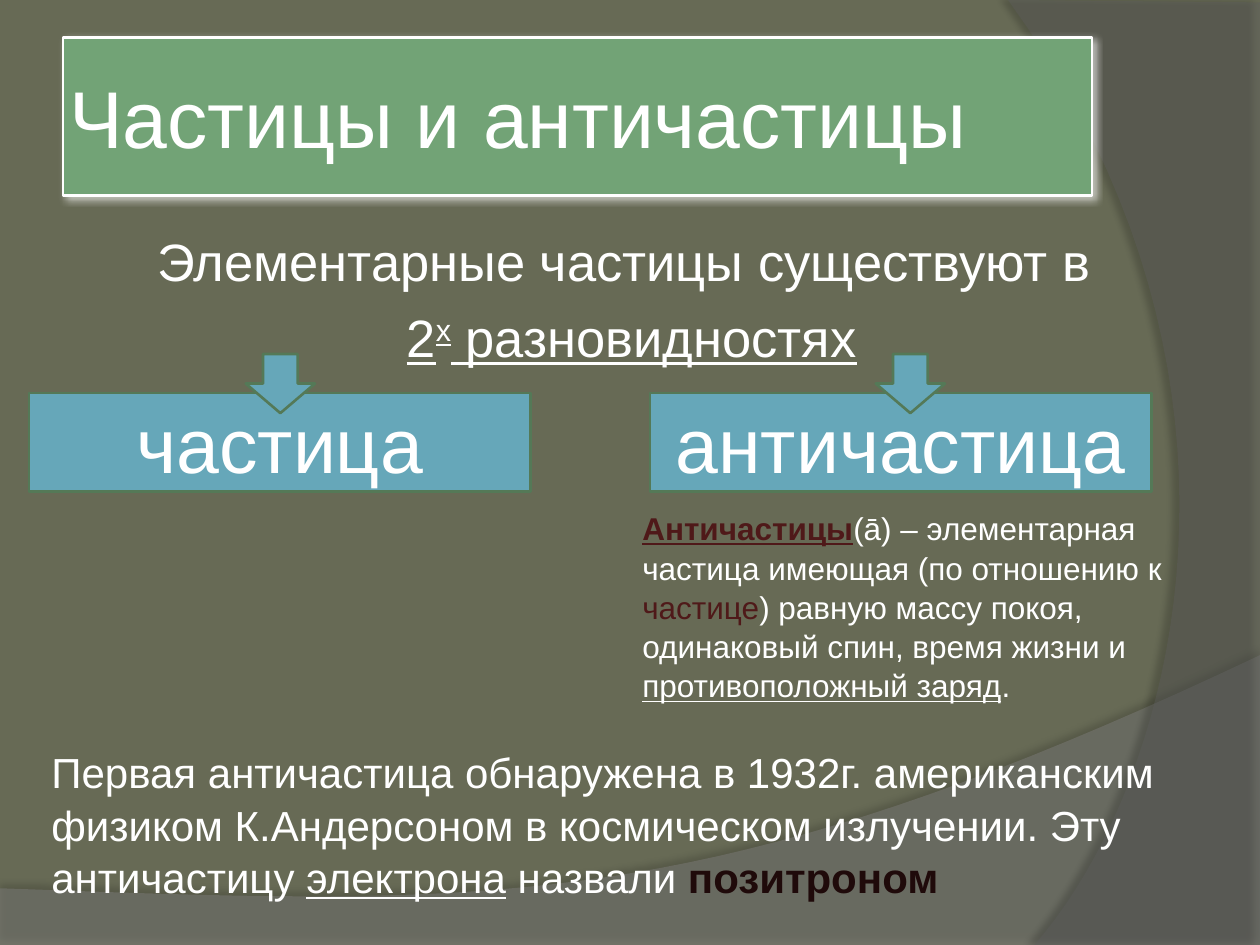
from lxml import etree
from pptx import Presentation
from pptx import util as u
from pptx.dml.color import RGBColor
from pptx.enum import shapes, text
from pptx.oxml.ns import qn

Pt = u.Pt
WHITE, BLUE, GREEN, DARK = "FFFFFF", "66A7B9", "547957", "4F1919"


def paint(sp, fill, line=None, alpha=None, shadow=None):
    sp.shadow.inherit = False
    sp.fill.solid()
    sp.fill.fore_color.rgb = RGBColor.from_string(fill)
    if alpha:
        clr = sp._element.spPr.find(qn("a:solidFill"))[0]
        etree.SubElement(clr, qn("a:alpha"), val=str(alpha * 1000))
    if line:
        sp.line.color.rgb = RGBColor.from_string(line)
        sp.line.width = Pt(1.5)
    else:
        sp.line.fill.background()
    if shadow:
        color, opacity, blur, dist, angle = shadow
        effects = sp._element.spPr.find(qn("a:effectLst"))
        shdw = etree.SubElement(effects, qn("a:outerShdw"), blurRad=str(Pt(blur)),
                                dist=str(Pt(dist)), dir=str(angle * 60000),
                                algn="ctr", rotWithShape="0")
        clr = etree.SubElement(shdw, qn("a:srgbClr"), val=color)
        etree.SubElement(clr, qn("a:alpha"), val=str(opacity * 1000))


def write(p, size, runs, color=WHITE, align=text.PP_ALIGN.LEFT):
    p.alignment = align
    p.font.size, p.font.name = Pt(size), "Arial"
    p.font.color.rgb = RGBColor.from_string(color)
    for words, style in runs:
        r = p.add_run()
        r.text = words
        r.font.bold = "b" in style or None
        r.font.underline = "u" in style or None
        if "sup" in style:
            r.font._element.set("baseline", "30000")
        if "color" in style:
            r.font.color.rgb = RGBColor.from_string(style["color"])


prs = Presentation()
prs.slide_width, prs.slide_height = Pt(720), Pt(540)
s = prs.slides.add_slide(prs.slide_layouts[5])
s.background.fill.solid()
s.background.fill.fore_color.rgb = RGBColor.from_string("676A55")

waves = [
    ([(0, 507.6), (0, 540), (720, 540)],
     [(720, 374.4), (402.5, 524.9), (281.5, 517.7), (0, 507.6)],
     "7F7F7F", 45, ("000000", 35, 4, 3.5, 270)),
    ([(720, 1.4), (720, 540)],
     [(591.1, 540), (673.2, 445.7), (733, 216), (576, 0)],
     "5E5E5E", 40, ("000000", 45, 4, 4, 180)),
]
for corners, (a, b, c, d), color, alpha, shadow in waves:
    pts = list(corners)
    for i in range(41):
        t = i / 40
        pts.append(tuple((1 - t) ** 3 * a[k] + 3 * (1 - t) ** 2 * t * b[k]
                         + 3 * (1 - t) * t ** 2 * c[k] + t ** 3 * d[k] for k in (0, 1)))
    pts = [(Pt(x), Pt(y)) for x, y in pts]
    fb = s.shapes.build_freeform(*pts[0])
    fb.add_line_segments(pts[1:], close=True)
    paint(fb.convert_to_shape(), color, alpha=alpha, shadow=shadow)

sp = s.shapes.title
s.shapes.element.append(sp._element)
sp.left, sp.top, sp.width, sp.height = Pt(36), Pt(21.6), Pt(588), Pt(90)
paint(sp, "72A376", WHITE, shadow=(WHITE, 60, 4, 2, 45))
tf = sp.text_frame
tf.margin_left = tf.margin_right = tf.margin_top = tf.margin_bottom = Pt(3.6)
tf.vertical_anchor = text.MSO_ANCHOR.MIDDLE
write(tf.paragraphs[0], 46, [("Частицы и античастицы", {})])

bodies = [
    (36, 126, 650, 178, 30, text.PP_ALIGN.CENTER, [
        [("Элементарные частицы существуют в ", {})],
        [("2", {"u": 1}), ("х", {"u": 1, "sup": 1}), (" разновидностях", {"u": 1})]]),
    (360, 286.6, 360, 116.6, 18, text.PP_ALIGN.LEFT, [
        [("Античастицы", {"b": 1, "u": 1, "color": DARK}),
         ("(ā) – элементарная частица имеющая (по отношению к ", {}),
         ("частице", {"color": DARK}),
         (") равную массу покоя, одинаковый спин, время жизни и ", {}),
         ("противоположный заряд", {"u": 1}), (".", {})]]),
    (22.3, 422, 664, 94.3, 24, text.PP_ALIGN.LEFT, [
        [("Первая античастица обнаружена в 1932г. американским физиком "
          "К.Андерсоном в космическом излучении. Эту античастицу ", {}),
         ("электрона", {"u": 1}), (" назвали ", {}),
         ("позитроном", {"b": 1, "color": "1F0A0A"})]]),
]
for x, y, w, h, size, align, paras in bodies:
    tf = s.shapes.add_textbox(Pt(x), Pt(y), Pt(w), Pt(h)).text_frame
    tf.word_wrap = True
    for i, runs in enumerate(paras):
        p = tf.add_paragraph() if i else tf.paragraphs[0]
        p.line_spacing = 1.04
        if len(paras) > 1:
            p.space_before = p.space_after = Pt(3)
        write(p, size, runs, align=align)

for x, arrow_x, label in [(16.6, 140.4, "частица"), (371.5, 500.4, "античастица")]:
    sp = s.shapes.add_shape(shapes.MSO_SHAPE.RECTANGLE, Pt(x), Pt(224.6), Pt(286.6), Pt(56.2))
    paint(sp, BLUE, GREEN)
    tf = sp.text_frame
    tf.word_wrap = True
    tf.vertical_anchor = text.MSO_ANCHOR.MIDDLE
    write(tf.paragraphs[0], 44, [(label, {})], align=text.PP_ALIGN.CENTER)
    sp = s.shapes.add_shape(shapes.MSO_SHAPE.DOWN_ARROW, Pt(arrow_x), Pt(202.3), Pt(39.6), Pt(33.8))
    paint(sp, BLUE, GREEN)

prs.save("out.pptx")
